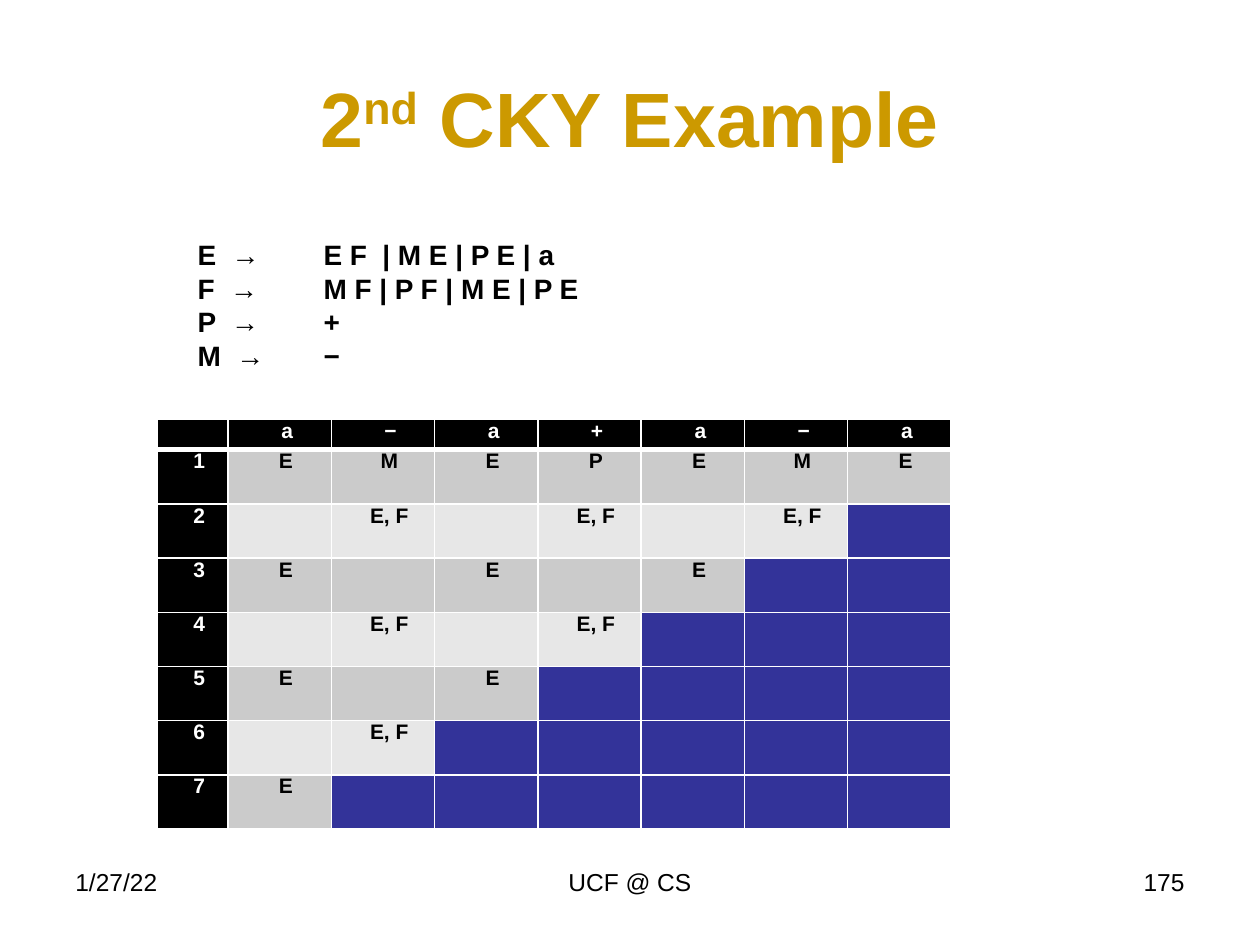
from lxml.etree import SubElement as Sub
from pptx import Presentation
from pptx.dml.color import RGBColor as RGB
from pptx.enum.text import MSO_ANCHOR as Anchor, PP_ALIGN as Align
from pptx.oxml.ns import qn
from pptx.util import Inches, Pt

HUES = {
    "gold": "CC9900", "black": "000000", "white": "FFFFFF",
    "odd": "CBCBCB", "even": "E7E7E7", "blue": "333399",
}
RULES = [
    "E  →\tE F  | M E | P E | a",
    "F  →\tM F | P F | M E | P E",
    "P  → \t+",
    "M  → \t−",
]
INPUT = ["a", "−", "a", "+", "a", "−", "a"]
CHART = [
    ["E", "M", "E", "P", "E", "M", "E"],
    ["", "E, F", "", "E, F", "", "E, F"],
    ["E", "", "E", "", "E"],
    ["", "E, F", "", "E, F"],
    ["E", "", "E"],
    ["", "E, F"],
    ["E"],
]


def style(para, size, hue, bold=False, align=Align.LEFT):
    para.alignment = align
    font = para.font
    font.name, font.size, font.bold = "Arial", Pt(size), bold
    font.color.rgb = RGB.from_string(HUES[hue])


def add_box(slide, box, anchor=Anchor.TOP):
    frame = slide.shapes.add_textbox(*map(Inches, box)).text_frame
    frame.word_wrap = True
    frame.vertical_anchor = anchor
    return frame


def add_title(slide, box):
    para = add_box(slide, box, Anchor.MIDDLE).paragraphs[0]
    for text, base in (("2", 0), ("nd", 30000), (" CKY Example", 0)):
        run = para.add_run()
        run.text = text
        if base:
            run._r.get_or_add_rPr().set("baseline", str(base))
    style(para, 44, "gold", True, Align.CENTER)


def add_rules(slide, box):
    frame = add_box(slide, box, Anchor.MIDDLE)
    frame.margin_bottom = Inches(0.25)
    frame.text = "\n".join(RULES)
    for para in frame.paragraphs:
        style(para, 16, "black", True)
        tabs = para._p.get_or_add_pPr()
        stops = Sub(tabs, qn("a:tabLst"))
        Sub(stops, qn("a:tab"), pos=str(Inches(1)), algn="l")
        tabs.insert(0, stops)


def add_edges(cell, widths):
    props = cell._tc.get_or_add_tcPr()
    for spot, (side, width) in enumerate(zip("LRTB", widths)):
        line = Sub(props, qn(f"a:ln{side}"), w=str(Pt(width)))
        fill = Sub(line, qn("a:solidFill"))
        Sub(fill, qn("a:srgbClr"), val=HUES["white"])
        props.insert(spot, line)


def fill_cell(cell, text, back, hue, head):
    cell.fill.solid()
    cell.fill.fore_color.rgb = RGB.from_string(HUES[back])
    cell.margin_left = cell.margin_right = Inches(0.06)
    cell.margin_top = cell.margin_bottom = 0
    para = cell.text_frame.paragraphs[0]
    style(para, 12, hue, True, Align.CENTER)
    if not text:
        Sub(para._p, qn("a:endParaRPr"), sz="1200")
        return
    para.text = text
    para.space_before = para.space_after = Pt(12 if head else 6)
    left, hang = (0.43, -0.31) if head else (0.3, -0.2)
    props = para._p.get_or_add_pPr()
    props.set("marL", str(Inches(left)))
    props.set("indent", str(Inches(hang)))


def add_chart(slide, box):
    count = len(INPUT)
    grid = slide.shapes.add_table(count + 1, count + 1, *map(Inches, box)).table
    for col, part in enumerate(grid.columns):
        part.width = Inches(0.82 if col else 0.56)
    for row, part in enumerate(grid.rows):
        part.height = Inches(0.43 if row else 0.24)
    lines = [[""] + INPUT]
    lines += [[str(num)] + line for num, line in enumerate(CHART, 1)]
    for row, line in enumerate(lines):
        for col in range(count + 1):
            text = line[col] if col < len(line) else ""
            edge = row == 0 or col == 0
            if edge:
                back = "black"
            elif col >= len(line):
                back = "blue"
            else:
                back = "odd" if row % 2 else "even"
            cell = grid.cell(row, col)
            fill_cell(cell, text, back, "white" if edge else "black", row == 0)
            add_edges(cell, (1, 1, 3 if row == 1 else 1, 3 if row == 0 else 1))


def add_foot(slide, box):
    left, top, width, height = box
    side, mid = 2.33, 3.17
    parts = [
        ("1/27/22", left, side, Align.LEFT),
        ("UCF @ CS", left + (width - mid) / 2, mid, Align.CENTER),
        ("175", left + width - side, side, Align.RIGHT),
    ]
    for text, start, span, align in parts:
        para = add_box(slide, (start, top, span, height)).paragraphs[0]
        para.text = text
        style(para, 14, "black", align=align)


def main():
    deck = Presentation()
    deck.slide_width, deck.slide_height = Inches(10), Inches(7.5)
    slide = deck.slides.add_slide(deck.slide_layouts[6])
    add_title(slide, (0.5, 0.3, 9, 1.25))
    add_foot(slide, (0.5, 6.83, 9, 0.52))
    add_chart(slide, (1.25, 3.33, 6.28, 3.22))
    add_rules(slide, (1.47, 1.83, 7.11, 1.38))
    deck.save("out.pptx")


if __name__ == "__main__":
    main()
